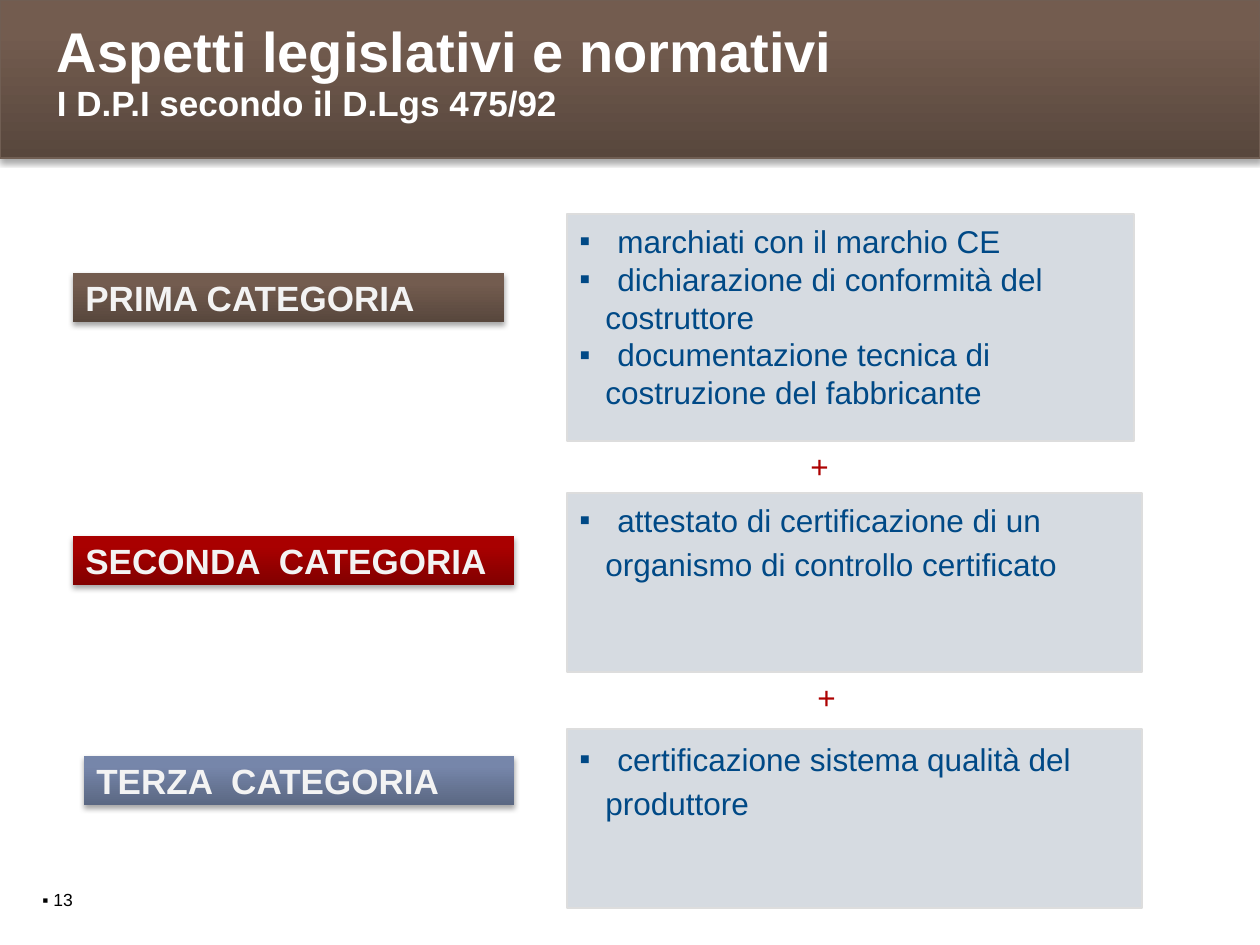
from lxml.etree import SubElement
from pptx import Presentation
from pptx.dml.color import RGBColor
from pptx.enum.shapes import MSO_SHAPE
from pptx.enum.text import MSO_ANCHOR, MSO_AUTO_SIZE, PP_ALIGN
from pptx.oxml.ns import qn
from pptx.util import Pt

PX = 914400 / 126
WHITE = RGBColor(0xFF, 0xFF, 0xFF)
BLACK = RGBColor(0, 0, 0)
PALE = RGBColor(0xF3, 0xF3, 0xF3)
PANEL = RGBColor(0xD6, 0xDB, 0xE1)
PANEL_EDGE = RGBColor(0xDD, 0xDD, 0xDD)
BANNER_EDGE = RGBColor(0x70, 0x5E, 0x53)
NAVY = RGBColor(0x00, 0x49, 0x86)
RED = RGBColor(0xAD, 0x01, 0x01)
BROWN_FADE = RGBColor(0x58, 0x47, 0x3D), RGBColor(0x73, 0x5C, 0x4F)
RED_FADE = RGBColor(0x82, 0, 0), RGBColor(0xA9, 0, 0)
BLUE_FADE = RGBColor(0x5B, 0x68, 0x83), RGBColor(0x76, 0x86, 0xAA)


def px(*lengths):
    return [round(length * PX) for length in lengths]


def add_raised_bar(place, fade):
    """Add a rectangle with an upward gradient and a soft shadow below."""
    bar = page.shapes.add_shape(MSO_SHAPE.RECTANGLE, *px(*place))
    bar.fill.gradient()
    bar.fill.gradient_angle = 90
    for stop, color, position in zip(bar.fill.gradient_stops, fade, (0, 0.8)):
        stop.color.rgb = color
        stop.position = position
    bar.line.fill.background()
    bar.shadow.inherit = False
    effects = bar._element.spPr.find(qn("a:effectLst"))
    shadow = SubElement(effects, qn("a:outerShdw"), blurRad="40000",
                        dist="23000", dir="5400000", rotWithShape="0")
    color = SubElement(shadow, qn("a:srgbClr"), val="000000")
    SubElement(color, qn("a:alpha"), val="35000")
    return bar


deck = Presentation()
deck.slide_width, deck.slide_height = px(1260, 945)
page = deck.slides.add_slide(deck.slide_layouts[5])

# Banner, behind the title
banner = add_raised_bar((0, 0, 1260, 158), BROWN_FADE)
banner.line.color.rgb = BANNER_EDGE
banner.line.width = Pt(0.75)
page.shapes._spTree.insert(2, banner._element)

title = page.shapes.title
title.left, title.top, title.width, title.height = px(47, 15, 1174, 72)
frame = title.text_frame
frame.text = "Aspetti legislativi e normativi\vI D.P.I secondo il D.Lgs 475/92"
frame.auto_size = MSO_AUTO_SIZE.NONE
frame.vertical_anchor = MSO_ANCHOR.TOP
frame.margin_left, frame.margin_top = px(10, 6)
para = frame.paragraphs[0]
para.alignment = PP_ALIGN.LEFT
para.line_spacing = 0.95
for span, size in zip(para.runs, (32, 20)):
    span.font.name = "Arial"
    span.font.size = Pt(size)
    span.font.bold = True
    span.font.color.rgb = WHITE

# Category labels
labels = [
    ("PRIMA CATEGORIA", (73, 273, 431, 49), BROWN_FADE),
    ("SECONDA  CATEGORIA", (73, 536, 441, 49), RED_FADE),
    ("TERZA  CATEGORIA", (84, 756, 430, 49), BLUE_FADE),
]
for text, place, fade in labels:
    label = add_raised_bar(place, fade)
    label.text_frame.text = text
    label.text_frame.vertical_anchor = MSO_ANCHOR.MIDDLE
    para = label.text_frame.paragraphs[0]
    para.alignment = PP_ALIGN.LEFT
    para.font.name = "Arial"
    para.font.size = Pt(20)
    para.font.bold = True
    para.font.color.rgb = PALE

# Requirement panels: place, top margin, space before, (bulleted, text) lines
panels = [
    ((567, 214, 567, 227), 8, 0, [
        (True, "marchiati con il marchio CE"),
        (True, "dichiarazione di conformità del"),
        (False, "costruttore"),
        (True, "documentazione tecnica di"),
        (False, "costruzione del fabbricante"),
    ]),
    ((567, 493, 575, 179), 8, 3.6, [
        (True, "attestato di certificazione di un"),
        (False, "organismo di controllo certificato"),
    ]),
    ((567, 729, 575, 179), 11, 3.6, [
        (True, "certificazione sistema qualità del"),
        (False, "produttore"),
    ]),
]
BULLET_INDENT, PLAIN_INDENT = px(38, 26)
for place, top_margin, space, lines in panels:
    panel = page.shapes.add_shape(MSO_SHAPE.RECTANGLE, *px(*place))
    panel.shadow.inherit = False
    panel.fill.solid()
    panel.fill.fore_color.rgb = PANEL
    panel.line.color.rgb = PANEL_EDGE
    panel.line.width = Pt(1.5)
    frame = panel.text_frame
    frame.vertical_anchor = MSO_ANCHOR.TOP
    frame.margin_top, frame.margin_bottom = px(top_margin, 8)
    frame.text = "\n".join(text for _, text in lines)
    for index, (para, (bulleted, _)) in enumerate(zip(frame.paragraphs, lines)):
        props = para._p.get_or_add_pPr()
        if bulleted:
            props.set("marL", str(BULLET_INDENT))
            props.set("indent", str(-BULLET_INDENT))
            SubElement(props, qn("a:buFont"), typeface="Arial")
            SubElement(props, qn("a:buChar"), char="▪")
        else:
            props.set("marL", str(PLAIN_INDENT))
        para.alignment = PP_ALIGN.LEFT
        if index and space:
            para.space_before = Pt(space)
        para.font.name = "Arial"
        para.font.size = Pt(18)
        para.font.color.rgb = NAVY

# Plus signs between the panels, and the page number
notes = [
    ("+", (798, 441, 94, 50), 18, RED),
    ("+", (805, 672, 84, 50), 18, RED),
    ("▪ 13", (30, 883, 185, 34), 10, BLACK),
]
for text, place, size, color in notes:
    box = page.shapes.add_textbox(*px(*place))
    box.text_frame.word_wrap = True
    box.text_frame.text = text
    font = box.text_frame.paragraphs[0].font
    font.name = "Arial"
    font.size = Pt(size)
    font.color.rgb = color

deck.save("out.pptx")
